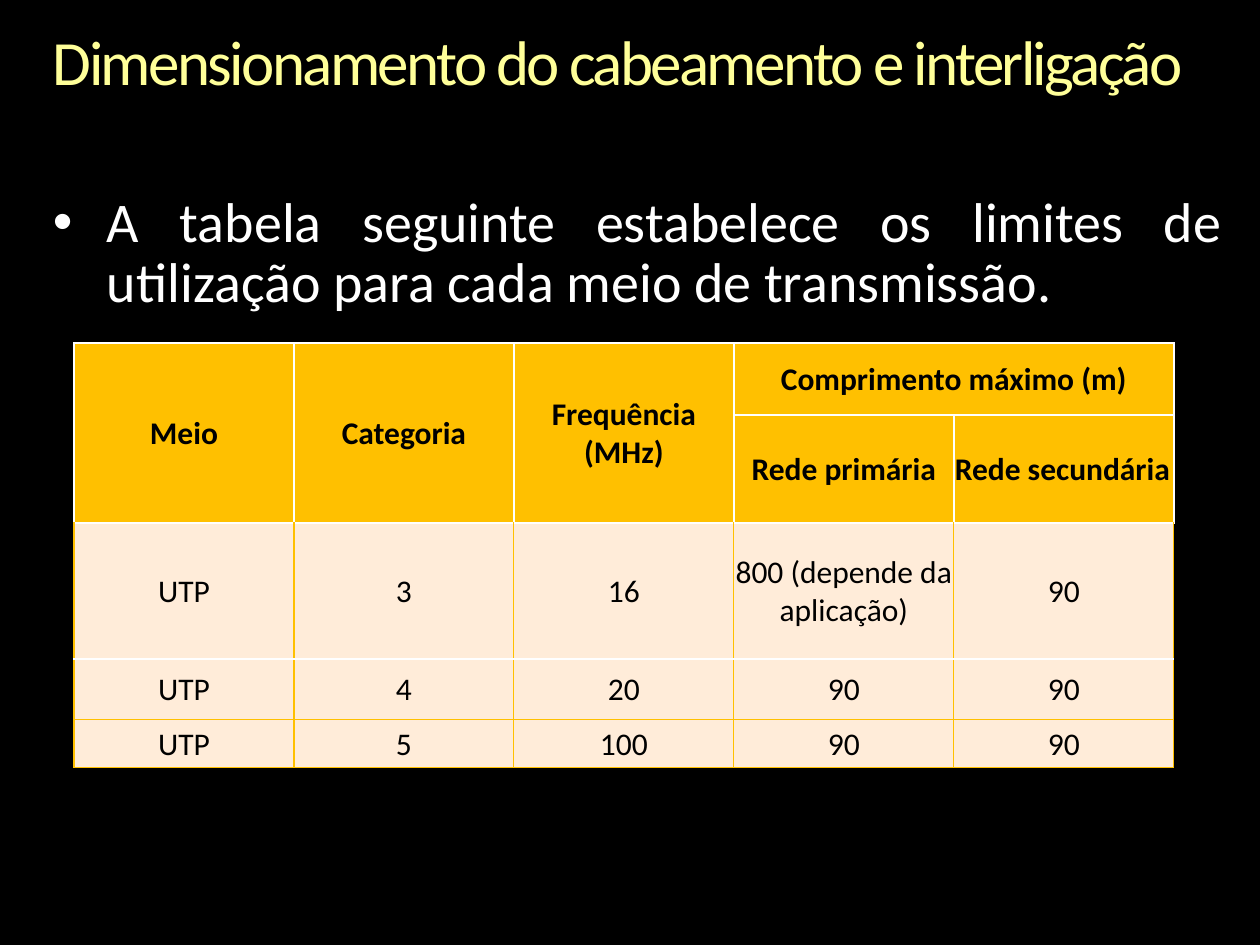
from pptx import Presentation
from pptx.dml.color import RGBColor
from pptx.enum.text import MSO_ANCHOR as Anchor, PP_ALIGN as Align
from pptx.oxml.ns import qn
from pptx.util import Pt
from lxml.etree import SubElement as Sub

SCALE = 914400 / 126
GOLD, CREAM, WHITE, BLACK = "FFC000", "FFECD9", "FFFFFF", "000000"


def px(num):
    return round(num * SCALE)


def hue(code):
    return RGBColor.from_string(code)


def put(item, vals):
    for key, val in vals.items():
        setattr(item, key, val)


class Deck:
    font = "Calibri"

    def __init__(self, wide, high, back):
        self.prs = Presentation()
        put(self.prs, {"slide_width": px(wide), "slide_height": px(high)})
        self.slide = self.prs.slides.add_slide(self.prs.slide_layouts[6])
        fill = self.slide.background.fill
        fill.solid()
        fill.fore_color.rgb = hue(back)

    def style(self, para, size, color, bold=False):
        put(para.font, {"name": self.font, "size": Pt(size), "bold": bold})
        para.font.color.rgb = hue(color)

    def text(self, words, box, size, color, align=Align.LEFT, dent=0, track=0):
        frame = self.slide.shapes.add_textbox(*map(px, box)).text_frame
        put(frame, {"word_wrap": True, "margin_left": 0, "margin_top": 0,
                    "margin_right": 0, "margin_bottom": 0})
        para = frame.paragraphs[0]
        put(para, {"text": words, "alignment": align, "line_spacing": 0.9})
        if dent:
            props = para._p.get_or_add_pPr()
            props.set("marL", str(px(dent)))
            props.set("indent", str(-px(dent)))
            Sub(props, qn("a:buFont"), typeface="Arial")
            Sub(props, qn("a:buChar"), char="•")
        self.style(para, size, color)
        if track:
            para.runs[0].font._element.set("spc", str(track))

    def edge(self, cell, side, color, width):
        line = Sub(cell._tc.get_or_add_tcPr(), qn("a:ln" + side), w=str(Pt(width)))
        Sub(Sub(line, qn("a:solidFill")), qn("a:srgbClr"), val=color)

    def cell(self, cell, words, fill, edges, bold, align):
        put(cell, {"margin_left": px(1), "margin_right": px(1), "margin_top": px(1),
                   "margin_bottom": 0, "vertical_anchor": Anchor.MIDDLE})
        for side, color in edges.items():
            self.edge(cell, side, color, 1 if color == WHITE else 0.75)
        cell.fill.solid()
        cell.fill.fore_color.rgb = hue(fill)
        para = cell.text_frame.paragraphs[0]
        put(para, {"text": words, "alignment": align})
        self.style(para, 18, BLACK, bold)

    def table(self, rows, left, top, wide, highs, heads, spans):
        count = len(rows[0])
        grid = self.slide.shapes.add_table(len(rows), count, px(left), px(top),
                                           px(wide * count), px(sum(highs))).table
        put(grid, {"first_row": False, "horz_banding": False})
        for col in grid.columns:
            col.width = px(wide)
        for r, (row, high) in enumerate(zip(rows, highs)):
            grid.rows[r].height = px(high)
            head = r < heads
            side = WHITE if head else GOLD
            # White rules frame the head and the first body row
            above = WHITE if r <= heads + 1 else GOLD
            below = WHITE if r <= heads else GOLD
            edges = {"L": side, "R": side, "T": above, "B": below}
            for c, words in enumerate(row):
                align = Align.JUSTIFY if words == "Rede secundária" else Align.CENTER
                self.cell(grid.cell(r, c), words, GOLD if head else CREAM,
                          edges, head, align)
        for start, end in spans:
            grid.cell(*start).merge(grid.cell(*end))


def main():
    deck = Deck(1260, 945, BLACK)

    # Title and bullet
    deck.text("Dimensionamento do cabeamento e interligação",
              (53, 31, 1156, 70), 36, "FFFF99", track=-150)
    deck.text("A tabela seguinte estabelece os limites de utilização para cada "
              "meio de transmissão.", (53, 194, 1170, 122), 32, WHITE,
              Align.JUSTIFY, dent=54)

    # Cable limits
    rows = [
        ["Meio", "Categoria", "Frequência (MHz)", "Comprimento máximo (m)", ""],
        ["", "", "", "Rede primária", "Rede secundária"],
        ["UTP", "3", "16", "800 (depende da aplicação)", "90"],
        ["UTP", "4", "20", "90", "90"],
        ["UTP", "5", "100", "90", "90"],
    ]
    spans = [((0, c), (1, c)) for c in range(3)] + [((0, 3), (0, 4))]
    deck.table(rows, 74, 343, 220, [72, 108, 136, 61, 48], 2, spans)

    deck.prs.save("out.pptx")


if __name__ == "__main__":
    main()
